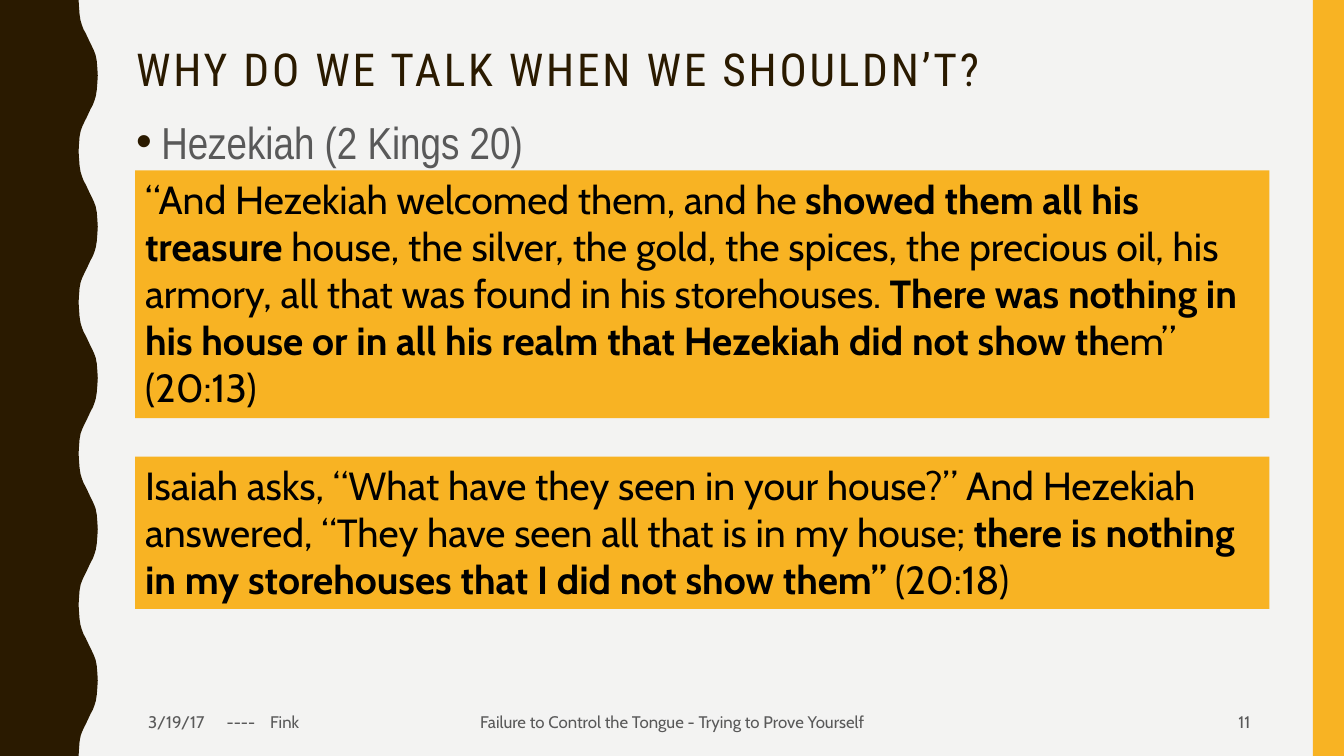
import pptx
import pptx.util
import pptx.dml.color
import pptx.enum.shapes
import pptx.enum.text
import pptx.oxml.ns
import lxml.etree

Inches = pptx.util.Inches
Pt = pptx.util.Pt
RGBColor = pptx.dml.color.RGBColor
ALIGN = pptx.enum.text.PP_ALIGN
ANCHOR = pptx.enum.text.MSO_ANCHOR
AUTO_SIZE = pptx.enum.text.MSO_AUTO_SIZE
RECT = pptx.enum.shapes.MSO_SHAPE.RECTANGLE
qn = pptx.oxml.ns.qn

PAPER = RGBColor(0xF3, 0xF3, 0xF2)
BROWN = RGBColor(0x2A, 0x1A, 0x00)
GOLD = RGBColor(0xF8, 0xB3, 0x23)
GREY = RGBColor(0x59, 0x59, 0x59)
BLACK = RGBColor(0x00, 0x00, 0x00)

SLIDE_W, SLIDE_H = 13.33, 7.5
WAVES = 5
# One crest from trough to peak: (share of the half wave, share of the depth)
HALF_WAVE = [(0, 0), (0.09, 0.02), (0.19, 0.05), (0.27, 0.1), (0.33, 0.17),
             (0.39, 0.26), (0.44, 0.37), (0.5, 0.48), (0.56, 0.59),
             (0.61, 0.69), (0.67, 0.8), (0.73, 0.89), (0.81, 0.95),
             (0.91, 0.98), (1, 1)]

QUOTES = [
    (1.69, 2.46, [
        ("“And Hezekiah welcomed them, and he ", False),
        ("showed them\u00a0all his treasure ", True),
        ("house, the silver, the gold, the spices, the precious oil, his "
         "armory, all that was found in his storehouses. ", False),
        ("There was nothing in his house or in all his realm that Hezekiah "
         "did not show th", True),
        ("em” (20:13)", False)]),
    (4.53, 1.51, [
        ("Isaiah asks, “What have they seen in your house?” And Hezekiah "
         "answered, “They have seen all that is in my house; ", False),
        ("there is nothing in my storehouses that I did not show them”", True),
        (" (20:18)", False)]),
]


def place(sp, x, y, w, h):
    sp.left, sp.top, sp.width, sp.height = map(Inches, (x, y, w, h))


def paint(sp, color):
    sp.fill.solid()
    sp.fill.fore_color.rgb = color
    sp.line.fill.background()
    sp.shadow.inherit = False


def style(r, font, size, color, bold=False):
    r.font.name = font
    r.font.size = Pt(size)
    r.font.color.rgb = color
    r.font.bold = bold


def prepare_frame(sp, anchor):
    tf = sp.text_frame
    tf.word_wrap = True
    tf.auto_size = AUTO_SIZE.NONE
    tf.vertical_anchor = anchor
    return tf


def add_wavy_edge(s, x, y, w, h, depth):
    """Fill the box, its right side cut by a wave of the given depth."""
    half = h / WAVES / 2
    points = []
    for i in range(2 * WAVES):
        for along, out in HALF_WAVE[:-1]:
            reach = out if i % 2 == 0 else 1 - out
            points.append((x + w - depth * (1 - reach), y + (i + along) * half))
    points += [(x + w - depth, y + h), (x, y + h)]
    builder = s.shapes.build_freeform(Inches(x), Inches(y))
    builder.add_line_segments([(Inches(px), Inches(py)) for px, py in points])
    paint(builder.convert_to_shape(), BROWN)


def add_bar(s, x, y, w, h):
    sp = s.shapes.add_shape(RECT, *map(Inches, (x, y, w, h)))
    paint(sp, GOLD)
    return sp


def fill_title(s, text, x, y, w, h):
    sp = s.shapes.title
    place(sp, x, y, w, h)
    tf = prepare_frame(sp, ANCHOR.TOP)
    tf.text = text
    p = tf.paragraphs[0]
    p.alignment = ALIGN.LEFT
    p.line_spacing = 0.9
    r = p.runs[0]
    style(r, "Roboto Condensed", 32.4, BROWN)
    r.font._element.set("spc", "200")


def fill_body(s, text, x, y, w, h):
    sp = s.placeholders[1]
    place(sp, x, y, w, h)
    tf = prepare_frame(sp, ANCHOR.TOP)
    tf.text = text
    p = tf.paragraphs[0]
    p.line_spacing = 1.1
    p.space_before = Pt(7)
    style(p.runs[0], "Arial Narrow", 32, GREY)
    pPr = p._p.get_or_add_pPr()
    pPr.set("marL", str(Inches(0.25)))
    pPr.set("indent", str(-Inches(0.25)))
    color = lxml.etree.SubElement(pPr, qn("a:buClr"))
    lxml.etree.SubElement(color, qn("a:srgbClr"), val=str(BROWN))
    lxml.etree.SubElement(pPr, qn("a:buFont"), typeface="Arial")
    lxml.etree.SubElement(pPr, qn("a:buChar"), char="•")


def add_quote(s, parts, x, y, w, h):
    tf = prepare_frame(add_bar(s, x, y, w, h), ANCHOR.TOP)
    p = tf.paragraphs[0]
    p.alignment = ALIGN.LEFT
    for text, bold in parts:
        r = p.add_run()
        r.text = text
        style(r, "Cabin", 28, BLACK, bold)


def add_footer_text(s, text, align, x, y, w, h, tabs=()):
    sp = s.shapes.add_textbox(*map(Inches, (x, y, w, h)))
    tf = prepare_frame(sp, ANCHOR.MIDDLE)
    tf.text = text
    p = tf.paragraphs[0]
    p.alignment = align
    style(p.runs[0], "Cabin", 12, GREY)
    if tabs:
        stops = lxml.etree.SubElement(p._p.get_or_add_pPr(), qn("a:tabLst"))
        for pos in tabs:
            lxml.etree.SubElement(stops, qn("a:tab"), pos=str(Inches(pos)), algn="l")


def add_footer(s, x, y, w, h):
    add_footer_text(s, "3/19/17\t----\tFink", ALIGN.LEFT, x, y, 2.55, h,
                    tabs=(0.78, 1.21))
    add_footer_text(s, "Failure to Control the Tongue - Trying to Prove Yourself",
                    ALIGN.CENTER, x + 3.05, y, 4.5, h)
    add_footer_text(s, "11", ALIGN.RIGHT, x + w - 3.08, y, 3.08, h)


def build_quote_slide(prs):
    s = prs.slides.add_slide(prs.slide_layouts[1])
    s.background.fill.solid()
    s.background.fill.fore_color.rgb = PAPER
    add_wavy_edge(s, 0, 0, 0.97, SLIDE_H, depth=0.19)
    add_bar(s, SLIDE_W - 0.31, 0, 0.31, SLIDE_H)
    fill_title(s, "WHY DO WE TALK WHEN WE SHOULDN’T?", 1.25, 0.42, 11.25, 0.41)
    fill_body(s, "Hezekiah (2 Kings 20)", 1.25, 1.03, 11.25, 5.4)
    add_footer(s, 1.37, 6.97, 11.13, 0.38)
    for top, height, parts in QUOTES:
        add_quote(s, parts, 1.34, top, 11.25, height)


def main():
    prs = pptx.Presentation()
    prs.slide_width = Inches(SLIDE_W)
    prs.slide_height = Inches(SLIDE_H)
    build_quote_slide(prs)
    prs.save("out.pptx")


if __name__ == "__main__":
    main()
